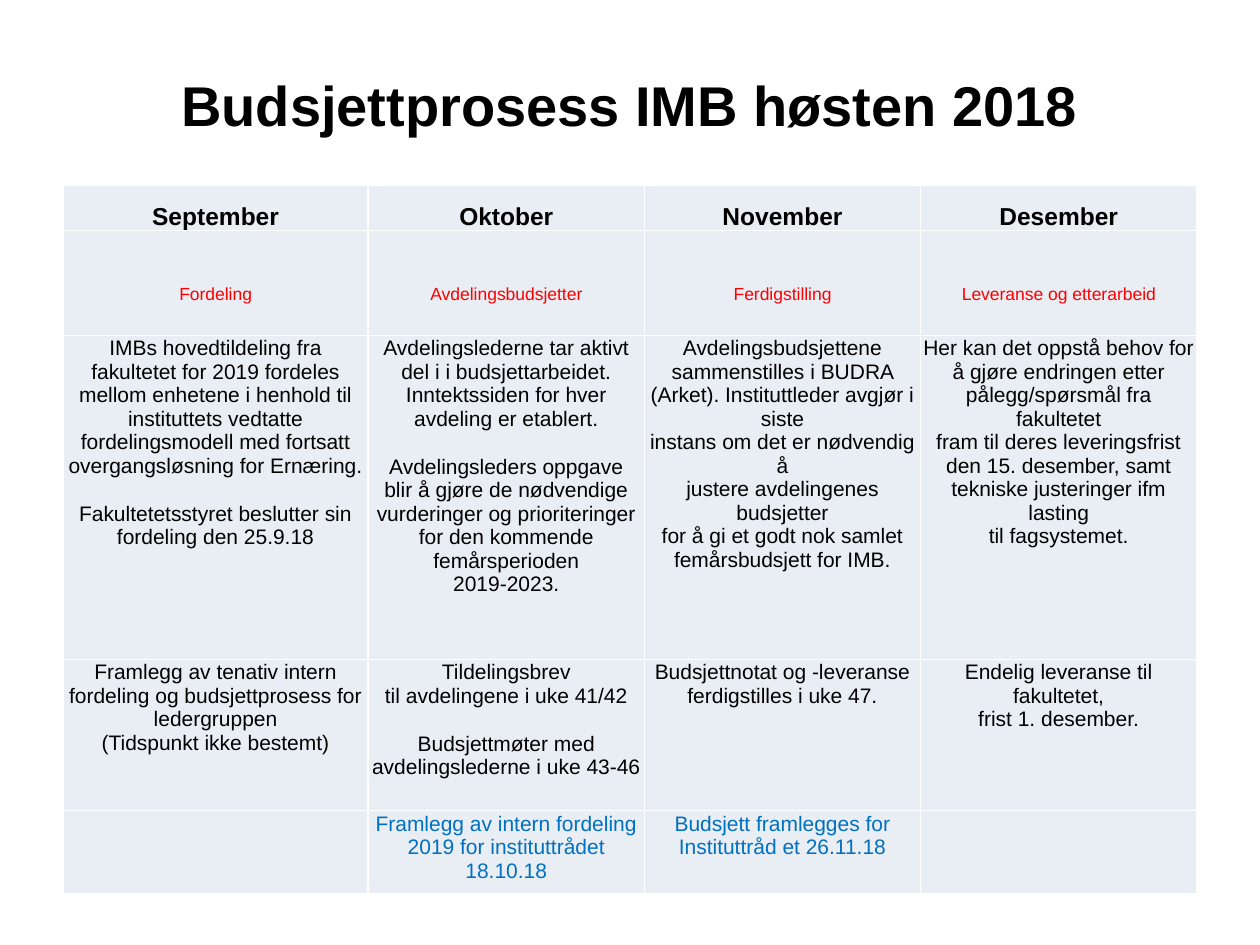
import pptx
import pptx.dml.color
import pptx.enum.text
import pptx.oxml
import pptx.oxml.ns
import pptx.util

BLACK = pptx.dml.color.RGBColor(0x00, 0x00, 0x00)
RED = pptx.dml.color.RGBColor(0xFF, 0x00, 0x00)
BLUE = pptx.dml.color.RGBColor(0x00, 0x70, 0xC0)
WHITE = pptx.dml.color.RGBColor(0xFF, 0xFF, 0xFF)
PALE_BLUE = pptx.dml.color.RGBColor(0xE9, 0xED, 0xF4)

FONT = "Arial"
SLIDE_WIDTH = pptx.util.Inches(10)
SLIDE_HEIGHT = pptx.util.Inches(7.5)
MARGIN = pptx.util.Inches(0.01)
BLOCK_GAP = pptx.util.Pt(14)
TOP = pptx.enum.text.MSO_ANCHOR.TOP
MIDDLE = pptx.enum.text.MSO_ANCHOR.MIDDLE
BOTTOM = pptx.enum.text.MSO_ANCHOR.BOTTOM

COLUMN_WIDTHS = [2.42, 2.19, 2.19, 2.19]
ROW_HEIGHTS = [0.36, 0.83, 2.57, 1.2, 0.66]

ROW_STYLES = [
    dict(size=14, color=BLACK, bold=True, anchor=BOTTOM),
    dict(size=10, color=RED, anchor=BOTTOM, spacing=1.5, foot=0.25),
    dict(size=12, color=BLACK),
    dict(size=12, color=BLACK),
    dict(size=12, color=BLUE),
]

TITLE = "Budsjettprosess IMB høsten 2018"
PLAN = [
    ["September", "Oktober", "November", "Desember"],
    ["Fordeling", "Avdelingsbudsjetter", "Ferdigstilling", "Leveranse og etterarbeid"],
    [
        "IMBs hovedtildeling fra fakultetet for 2019 fordeles mellom enhetene i henhold til "
        "instituttets vedtatte fordelingsmodell med fortsatt overgangsløsning for Ernæring.\n\n"
        "Fakultetetsstyret beslutter sin fordeling den 25.9.18",
        "Avdelingslederne tar aktivt\ndel i i budsjettarbeidet.\nInntektssiden for hver\n"
        "avdeling er etablert.\n\nAvdelingsleders oppgave\n"
        "blir å gjøre de nødvendige vurderinger og prioriteringer\n"
        "for den kommende femårsperioden\n2019-2023.",
        "Avdelingsbudsjettene\n"
        "sammenstilles i BUDRA (Arket). Instituttleder avgjør i siste\n"
        "instans om det er nødvendig å\njustere avdelingenes budsjetter\n"
        "for å gi et godt nok samlet\nfemårsbudsjett for IMB.",
        "Her kan det oppstå behov for\n"
        "å gjøre endringen etter pålegg/spørsmål fra fakultetet\n"
        "fram til deres leveringsfrist den 15. desember, samt tekniske justeringer ifm lasting\n"
        "til fagsystemet.",
    ],
    [
        "Framlegg av tenativ intern fordeling og budsjettprosess for ledergruppen\n"
        "(Tidspunkt ikke bestemt)",
        "Tildelingsbrev\ntil avdelingene i uke 41/42\n\n"
        "Budsjettmøter med avdelingslederne i uke 43-46",
        "Budsjettnotat og -leveranse ferdigstilles i uke 47.",
        "Endelig leveranse til fakultetet,\nfrist 1. desember.",
    ],
    [
        "",
        "Framlegg av intern fordeling 2019 for instituttrådet 18.10.18",
        "Budsjett framlegges for\nInstituttråd et 26.11.18",
        "",
    ],
]


def write_text(frame, text, size, color, bold=False, spacing=1.0):
    """Write centred lines, with a gap between blocks parted by an empty line."""
    blocks = [block.split("\n") for block in text.split("\n\n")]
    frame.text = "\n".join(line for block in blocks for line in block)
    block_starts = [sum(map(len, blocks[:index])) for index in range(1, len(blocks))]
    for index, para in enumerate(frame.paragraphs):
        para.alignment = pptx.enum.text.PP_ALIGN.CENTER
        para.line_spacing = spacing
        if index in block_starts:
            para.space_before = BLOCK_GAP
        for font in [para.font] + [span.font for span in para.runs]:
            font.name = FONT
            font.size = pptx.util.Pt(size)
            font.bold = bold
            font.color.rgb = color


def add_borders(cell):
    """Give the cell thin white lines on all four sides."""
    properties = cell._tc.get_or_add_tcPr()
    for position, side in enumerate(["lnL", "lnR", "lnT", "lnB"]):
        line = pptx.oxml.parse_xml(
            f'<a:{side} {pptx.oxml.ns.nsdecls("a")} w="12700"><a:solidFill>'
            f'<a:srgbClr val="{WHITE}"/></a:solidFill></a:{side}>'
        )
        properties.insert(position, line)


def fill_cell(cell, text, anchor=TOP, foot=0, **style):
    """Set the fill, borders, margins and text of one cell."""
    cell.fill.solid()
    cell.fill.fore_color.rgb = PALE_BLUE
    add_borders(cell)
    cell.margin_left = cell.margin_right = cell.margin_top = MARGIN
    cell.margin_bottom = pptx.util.Inches(foot)
    cell.vertical_anchor = anchor
    write_text(cell.text_frame, text, **style)


def add_title(slide, left, top, width, height):
    """Place the slide heading in the given box."""
    box = slide.shapes.add_textbox(left, top, width, height)
    box.text_frame.word_wrap = True
    box.text_frame.vertical_anchor = MIDDLE
    write_text(box.text_frame, TITLE, size=32, color=BLACK, bold=True)


def add_plan(slide, left, top, width, height):
    """Place the month plan, sharing the given box among columns and rows."""
    frame = slide.shapes.add_table(len(PLAN), len(PLAN[0]), left, top, width, height)
    table = frame.table
    table.first_row = table.horz_banding = False
    for column, share in zip(table.columns, COLUMN_WIDTHS):
        column.width = int(width * share / sum(COLUMN_WIDTHS))
    for row, share in zip(table.rows, ROW_HEIGHTS):
        row.height = int(height * share / sum(ROW_HEIGHTS))
    for row, texts, style in zip(table.rows, PLAN, ROW_STYLES):
        for cell, text in zip(row.cells, texts):
            fill_cell(cell, text, **style)


def main():
    """Build and save the budget process slide."""
    deck = pptx.Presentation()
    deck.slide_width, deck.slide_height = SLIDE_WIDTH, SLIDE_HEIGHT
    slide = deck.slides.add_slide(deck.slide_layouts[6])
    left, width = int(SLIDE_WIDTH * 0.05), int(SLIDE_WIDTH * 0.9)
    add_title(slide, left, int(SLIDE_HEIGHT * 0.06), width, int(SLIDE_HEIGHT * 0.1))
    add_plan(slide, left, int(SLIDE_HEIGHT * 0.196), width, int(SLIDE_HEIGHT * 0.75))
    deck.save("out.pptx")


if __name__ == "__main__":
    main()
